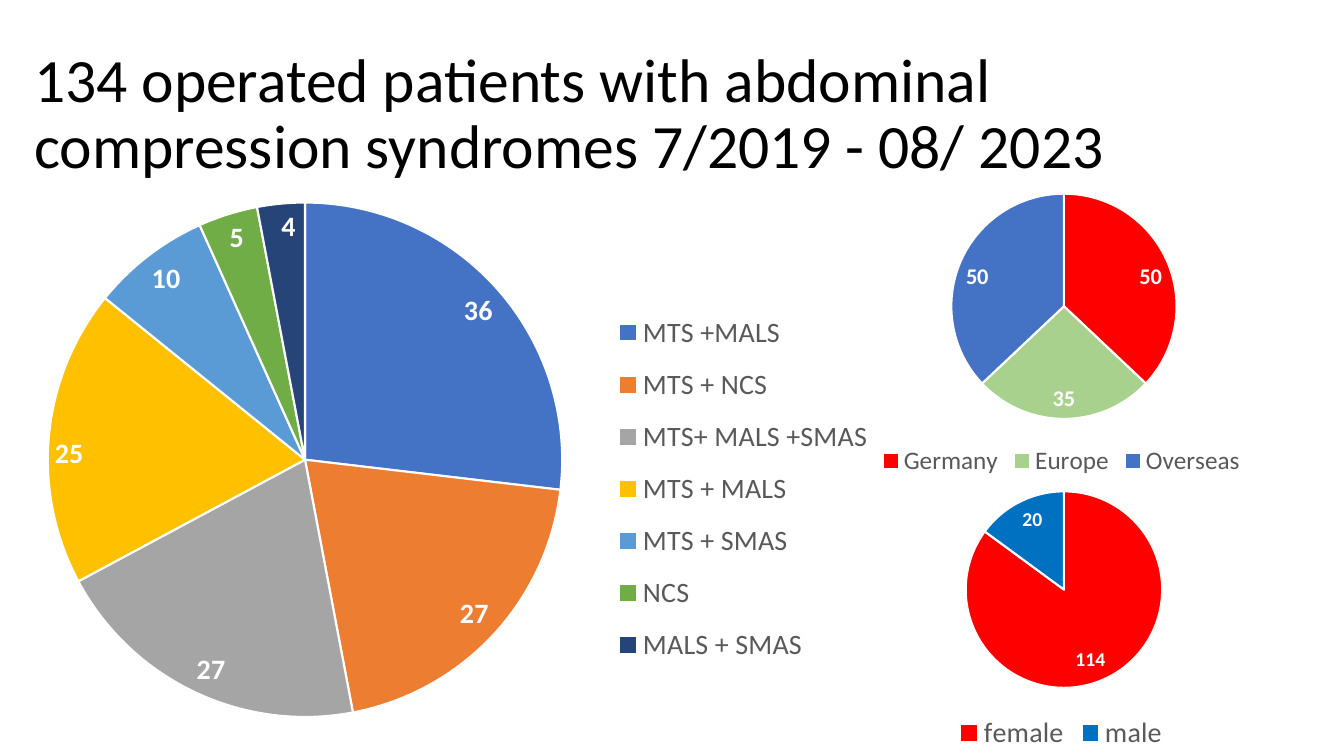
from dataclasses import dataclass

from lxml import etree
from pptx import Presentation
from pptx.chart.data import CategoryChartData
from pptx.dml.color import RGBColor
from pptx.enum.chart import XL_CHART_TYPE, XL_LABEL_POSITION, XL_LEGEND_POSITION
from pptx.enum.text import MSO_ANCHOR
from pptx.oxml.ns import qn
from pptx.util import Cm, Pt

PIE = XL_CHART_TYPE.PIE
INSIDE_END = XL_LABEL_POSITION.INSIDE_END
RIGHT = XL_LEGEND_POSITION.RIGHT
BOTTOM = XL_LEGEND_POSITION.BOTTOM
MIDDLE = MSO_ANCHOR.MIDDLE


@dataclass(frozen=True)
class Theme:
    font: str = "Calibri"
    title_size: int = 44
    large_size: int = 20
    medium_size: int = 18
    label_size: int = 16
    small_size: int = 14
    base_size: int = 10
    black: str = "000000"
    white: str = "FFFFFF"
    grey_text: str = "595959"
    blue: str = "4472C4"
    orange: str = "ED7D31"
    grey: str = "A5A5A5"
    gold: str = "FFC000"
    light_blue: str = "5B9BD5"
    green: str = "70AD47"
    navy: str = "264478"
    red: str = "FF0000"
    light_green: str = "A9D18E"
    strong_blue: str = "0070C0"


THEME = Theme()


def set_font(font, size, color, bold=False):
    font.name = THEME.font
    font.size = Pt(size)
    font.bold = bold
    font.color.rgb = RGBColor.from_string(color)


def add_title(slide, text):
    box = slide.shapes.add_textbox(Cm(0.61), Cm(0.61), Cm(30.94), Cm(4.6))
    frame = box.text_frame
    frame.word_wrap = True
    frame.vertical_anchor = MIDDLE
    frame.text = text
    paragraph = frame.paragraphs[0]
    paragraph.line_spacing = 0.9
    set_font(paragraph.runs[0].font, THEME.title_size, THEME.black)


def set_layout(element, bounds, inner=False):
    """Place a plot area or legend at x, y, width, height as shares of the chart."""
    layout = element.find(qn("c:layout"))
    if layout is None:
        layout = etree.Element(qn("c:layout"))
        position = element.find(qn("c:legendPos"))
        if position is None:
            element.insert(0, layout)
        else:
            position.addnext(layout)
    manual = etree.SubElement(layout, qn("c:manualLayout"))
    settings = [("layoutTarget", "inner")] if inner else []
    settings += [("xMode", "edge"), ("yMode", "edge")]
    settings += zip("xywh", bounds)
    for name, value in settings:
        etree.SubElement(manual, qn(f"c:{name}")).set("val", str(value))


def add_pie(slide, area, slices, pie_bounds, label_size, legend_size,
            legend_position=BOTTOM, legend_bounds=None):
    """Draw a pie from (category, value, colour) slices."""
    data = CategoryChartData()
    data.categories = [category for category, _, _ in slices]
    data.add_series("Series 1", [value for _, value, _ in slices])
    chart = slide.shapes.add_chart(PIE, *map(Cm, area), data).chart
    chart.has_title = False
    set_font(chart.font, THEME.base_size, THEME.black)

    plot = chart.plots[0]
    plot.vary_by_categories = True
    for index, (_, _, color) in enumerate(slices):
        style = plot.series[0].points[index].format
        style.fill.solid()
        style.fill.fore_color.rgb = RGBColor.from_string(color)
        style.line.color.rgb = RGBColor.from_string(THEME.white)
        style.line.width = Pt(1.5)

    labels = plot.series[0].data_labels
    labels.show_value = True
    labels.position = INSIDE_END
    set_font(labels.font, label_size, THEME.white, bold=True)

    chart.has_legend = True
    legend = chart.legend
    legend.position = legend_position
    legend.include_in_layout = False
    set_font(legend.font, legend_size, THEME.grey_text)

    plot_area = chart.element.find(".//" + qn("c:plotArea"))
    set_layout(plot_area, pie_bounds, inner=True)
    if legend_bounds:
        set_layout(chart.element.find(".//" + qn("c:legend")), legend_bounds)


def main():
    presentation = Presentation()
    presentation.slide_width = Cm(33.87)
    presentation.slide_height = Cm(19.05)
    slide = presentation.slides.add_slide(presentation.slide_layouts[6])

    syndromes = [
        ("MTS +MALS", 36, THEME.blue),
        ("MTS + NCS", 27, THEME.orange),
        ("MTS+ MALS +SMAS", 27, THEME.grey),
        ("MTS + MALS", 25, THEME.gold),
        ("MTS + SMAS", 10, THEME.light_blue),
        ("NCS", 5, THEME.green),
        ("MALS + SMAS", 4, THEME.navy),
    ]
    genders = [("female", 114, THEME.red), ("male", 20, THEME.strong_blue)]
    origins = [
        ("Germany", 50, THEME.red),
        ("Europe", 35, THEME.light_green),
        ("Overseas", 50, THEME.blue),
    ]

    add_pie(slide, (-1.07, 3.86, 24.46, 14.58), syndromes, (0.093, 0.085, 0.53, 0.89),
            THEME.large_size, THEME.large_size, RIGHT, (0.67, 0.25, 0.28, 0.66))
    add_title(slide, "134 operated patients with abdominal compression syndromes "
                     "7/2019 - 08/ 2023")
    add_pie(slide, (20.4, 11.43, 12.7, 7.62), genders, (0.31, 0.125, 0.39, 0.65),
            THEME.small_size, THEME.large_size)
    add_pie(slide, (20.4, 4.5, 12.7, 7.62), origins, (0.28, 0.05, 0.45, 0.745),
            THEME.label_size, THEME.medium_size)

    presentation.save("out.pptx")


if __name__ == "__main__":
    main()
